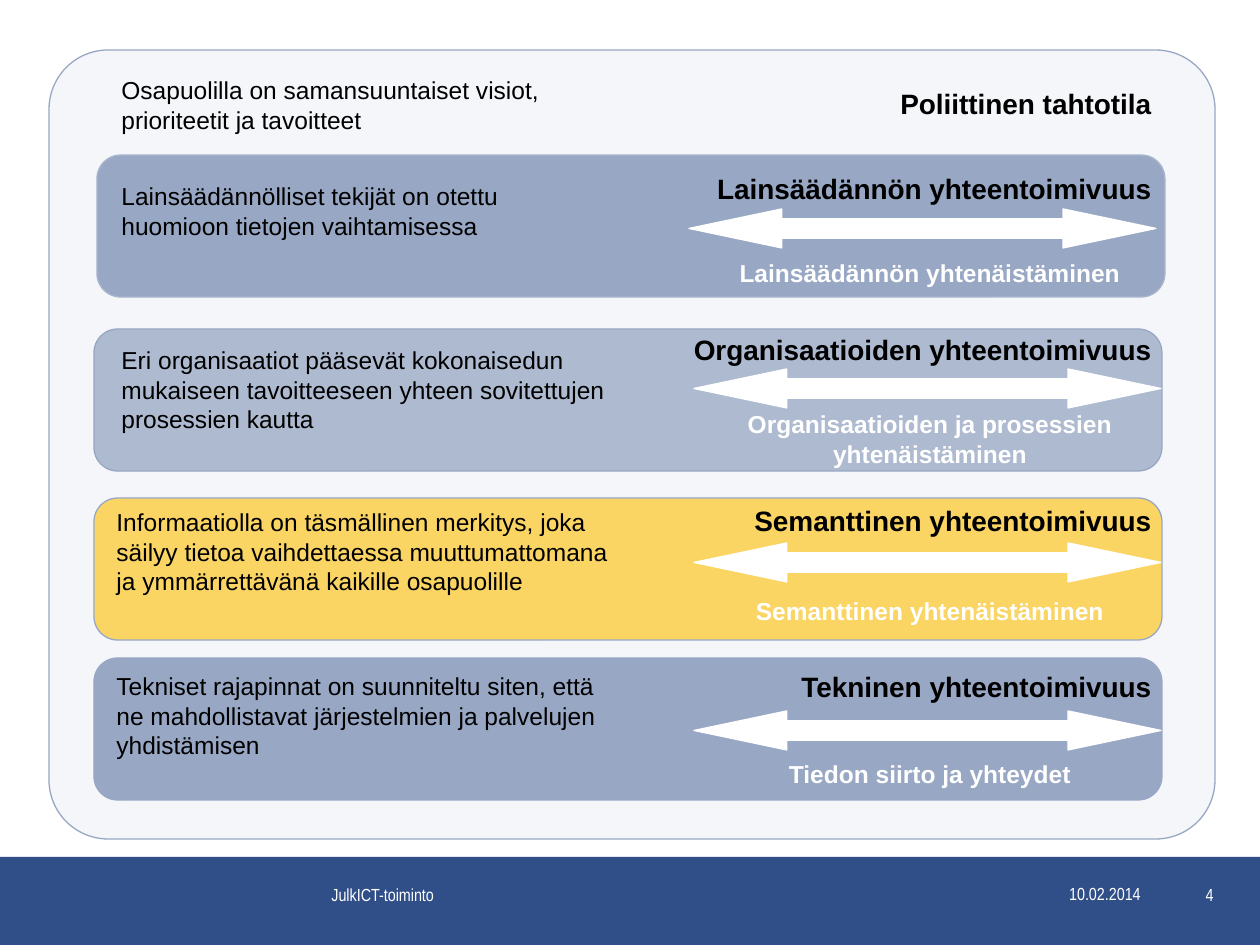
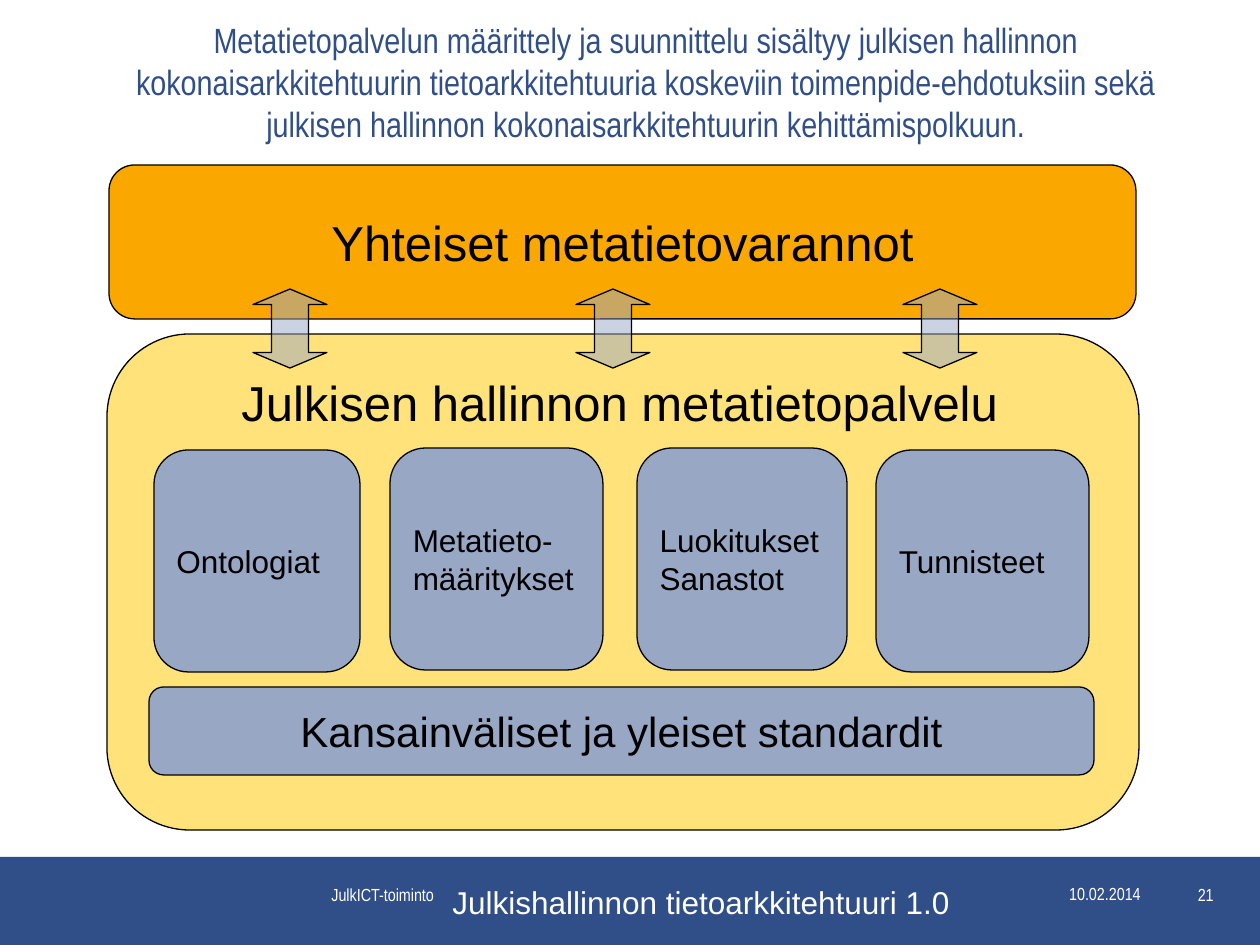
import pptx
import pptx.util
from lxml import etree
from pptx.dml.color import RGBColor
from pptx.enum.shapes import MSO_SHAPE
from pptx.enum.text import MSO_ANCHOR, PP_ALIGN
from pptx.oxml.ns import qn

NAVY = RGBColor(0x30, 0x4E, 0x88)
BLUE = RGBColor(0x98, 0xA7, 0xC4)
MID_BLUE = RGBColor(0x80, 0x93, 0xB6)
EDGE_BLUE = RGBColor(0xA8, 0xB5, 0xCD)
PALE_BLUE = RGBColor(0xEB, 0xEE, 0xF4)
GOLD = RGBColor(0xFF, 0xC0, 0x00)
ORANGE = RGBColor(0xFA, 0xA7, 0x00)
YELLOW = RGBColor(0xFF, 0xE2, 0x79)
WHITE = RGBColor(0xFF, 0xFF, 0xFF)
BLACK = RGBColor(0x00, 0x00, 0x00)

BODY_FONT = "Arial"
NARROW_FONT = "Arial Narrow"
LEFT, CENTER, RIGHT = PP_ALIGN.LEFT, PP_ALIGN.CENTER, PP_ALIGN.RIGHT

UNIT_NAME = "JulkICT-toiminto"
DATE = "10.02.2014"

# Descriptions are placed by left, top and width.
POLITICAL_WILL = {
    "description": "Osapuolilla on samansuuntaiset visiot, prioriteetit ja tavoitteet",
    "description_at": (109, 69, 512),
    "name": "Poliittinen tahtotila",
    "name_top": 80,
}
LEVELS = [
    {
        "band_at": (97, 155), "fill": BLUE, "opacity": 100, "edge": EDGE_BLUE,
        "description": "Lainsäädännölliset tekijät on otettu huomioon tietojen vaihtamisessa",
        "description_at": (109, 175, 512),
        "name": "Lainsäädännön yhteentoimivuus", "name_top": 165,
        "arrow_at": (689, 209),
        "action": "Lainsäädännön yhtenäistäminen", "action_top": 252,
    },
    {
        "band_at": (94, 329), "fill": MID_BLUE, "opacity": 60, "edge": BLUE,
        "description": "Eri organisaatiot pääsevät kokonaisedun mukaiseen tavoitteeseen "
                       "yhteen sovitettujen prosessien kautta",
        "description_at": (109, 339, 512),
        "name": "Organisaatioiden yhteentoimivuus", "name_top": 326,
        "arrow_at": (694, 369),
        "action": "Organisaatioiden ja prosessien yhtenäistäminen", "action_top": 403,
    },
    {
        "band_at": (94, 498), "fill": GOLD, "opacity": 60, "edge": BLUE,
        "description": "Informaatiolla on täsmällinen merkitys, joka säilyy tietoa "
                       "vaihdettaessa muuttumattomana ja ymmärrettävänä kaikille osapuolille",
        "description_at": (104, 501, 536),
        "name": "Semanttinen yhteentoimivuus", "name_top": 497,
        "arrow_at": (694, 543),
        "action": "Semanttinen yhtenäistäminen", "action_top": 590,
    },
    {
        "band_at": (94, 658), "fill": BLUE, "opacity": 100, "edge": BLUE,
        "description": "Tekniset rajapinnat on suunniteltu siten, että ne mahdollistavat "
                       "järjestelmien ja palvelujen yhdistämisen",
        "description_at": (104, 665, 512),
        "name": "Tekninen yhteentoimivuus", "name_top": 663,
        "arrow_at": (694, 711),
        "action": "Tiedon siirto ja yhteydet", "action_top": 753,
    },
]

METADATA_TITLE = (
    "Metatietopalvelun määrittely ja suunnittelu sisältyy julkisen hallinnon "
    "kokonaisarkkitehtuurin tietoarkkitehtuuria koskeviin toimenpide-ehdotuksiin sekä\v"
    "julkisen hallinnon kokonaisarkkitehtuurin kehittämispolkuun."
)
SHARED_STORES = "Yhteiset metatietovarannot"
SERVICE = "Julkisen hallinnon metatietopalvelu"
STANDARDS = "Kansainväliset ja yleiset standardit"
ARCHITECTURE = "Julkishallinnon tietoarkkitehtuuri 1.0"
SERVICE_PARTS = [  # text, left, top, width
    ("Ontologiat", 154, 450, 206),
    ("Metatieto-\nmääritykset", 390, 448, 213),
    ("Luokitukset\nSanastot", 637, 448, 210),
    ("Tunnisteet", 876, 450, 213),
]
LINK_LEFTS = [253, 576, 903]


def px(length):
    return pptx.util.Emu(round(length * 914400 / 126))


def write(box, text, size, color=BLACK, align=LEFT, bold=False,
          font=BODY_FONT, anchor=MSO_ANCHOR.TOP):
    frame = box.text_frame
    frame.word_wrap = True
    frame.vertical_anchor = anchor
    frame.text = text
    for para in frame.paragraphs:
        para.alignment = align
        para.font.name = font
        para.font.size = pptx.util.Pt(size)
        para.font.bold = bold
        para.font.color.rgb = color


def add_text(page, text, left, top, width, height, size, **style):
    box = page.shapes.add_textbox(px(left), px(top), px(width), px(height))
    write(box, text, size, **style)


def set_adjustments(shape, values):
    """Write the guides by name, since their listed order varies by shape."""
    guides = next(shape._element.iter(qn("a:avLst")))
    for guide in list(guides):
        guides.remove(guide)
    names = ["adj"] if len(values) == 1 else ["adj1", "adj2"]
    for name, value in zip(names, values):
        guide = etree.SubElement(guides, qn("a:gd"))
        guide.set("name", name)
        guide.set("fmla", f"val {round(value * 100000)}")


def add_shape(page, kind, left, top, width, height, fill, edge=None,
              opacity=100, adjust=()):
    shape = page.shapes.add_shape(kind, px(left), px(top), px(width), px(height))
    shape.shadow.inherit = False
    shape.fill.solid()
    shape.fill.fore_color.rgb = fill
    if opacity < 100:
        color = shape.fill._xPr.find(qn("a:solidFill"))[0]
        etree.SubElement(color, qn("a:alpha")).set("val", str(opacity * 1000))
    if edge is None:
        shape.line.fill.background()
    else:
        shape.line.color.rgb = edge
        shape.line.width = pptx.util.Pt(0.75)
    if adjust:
        set_adjustments(shape, adjust)
    return shape


def add_rounded(page, *place, corner=0.167, **look):
    return add_shape(page, MSO_SHAPE.ROUNDED_RECTANGLE, *place,
                     adjust=[corner], **look)


def add_page(deck, number):
    """Add a blank page with the footer band."""
    page = deck.slides.add_slide(deck.slide_layouts[6])
    add_shape(page, MSO_SHAPE.RECTANGLE, 0, 857, 1260, 88, NAVY)
    for text, left, top, width, align in [
        (UNIT_NAME, 319, 878, 140, LEFT),
        (DATE, 1033, 877, 120, RIGHT),
        (str(number), 1159, 878, 67, RIGHT),
    ]:
        add_text(page, text, left, top, width, 34, 10,
                 color=WHITE, align=align, font=NARROW_FONT)
    return page


def add_level_text(page, level):
    add_text(page, level["description"], *level["description_at"], 100, 14)
    add_text(page, level["name"], 662, level["name_top"], 502, 47, 16,
             align=RIGHT, bold=True)


def build_levels(deck):
    page = add_page(deck, 4)
    add_rounded(page, 49, 50, 1166, 789, corner=0.075,
                fill=PALE_BLUE, opacity=50, edge=BLUE)
    add_level_text(page, POLITICAL_WILL)
    for level in LEVELS:
        add_rounded(page, *level["band_at"], 1068, 142, fill=level["fill"],
                    opacity=level["opacity"], edge=level["edge"])
        add_shape(page, MSO_SHAPE.LEFT_RIGHT_ARROW, *level["arrow_at"], 467, 39,
                  WHITE, WHITE, adjust=[0.5, 2.38])
        add_level_text(page, level)
        add_text(page, level["action"], 660, level["action_top"], 540, 42, 14,
                 color=WHITE, align=CENTER, bold=True)


def build_metadata_service(deck):
    page = add_page(deck, 21)
    add_rounded(page, 107, 334, 1032, 496, fill=YELLOW, edge=BLACK)
    add_text(page, METADATA_TITLE, 98, 12, 1096, 139, 20, color=NAVY,
             align=CENTER, font=NARROW_FONT, anchor=MSO_ANCHOR.MIDDLE)
    parts = [(text, (left, top, width, 222), BLUE, 18, LEFT)
             for text, left, top, width in SERVICE_PARTS]
    parts += [
        (SHARED_STORES, (109, 165, 1027, 154), ORANGE, 28, CENTER),
        (STANDARDS, (149, 687, 945, 88), BLUE, 24, CENTER),
    ]
    for text, place, fill, size, align in parts:
        box = add_rounded(page, *place, fill=fill, edge=BLACK)
        write(box, text, size, align=align, anchor=MSO_ANCHOR.MIDDLE)
    add_text(page, SERVICE, 188, 366, 863, 72, 28, align=CENTER)
    for left in LINK_LEFTS:
        add_shape(page, MSO_SHAPE.UP_DOWN_ARROW, left, 289, 74, 79, BLUE, BLACK,
                  opacity=50, adjust=[0.5, 0.21])
    add_text(page, ARCHITECTURE, 440, 877, 630, 50, 18, color=WHITE)


def main():
    deck = pptx.Presentation()
    deck.slide_width, deck.slide_height = px(1260), px(945)
    build_levels(deck)
    build_metadata_service(deck)
    deck.save("out.pptx")


if __name__ == "__main__":
    main()
